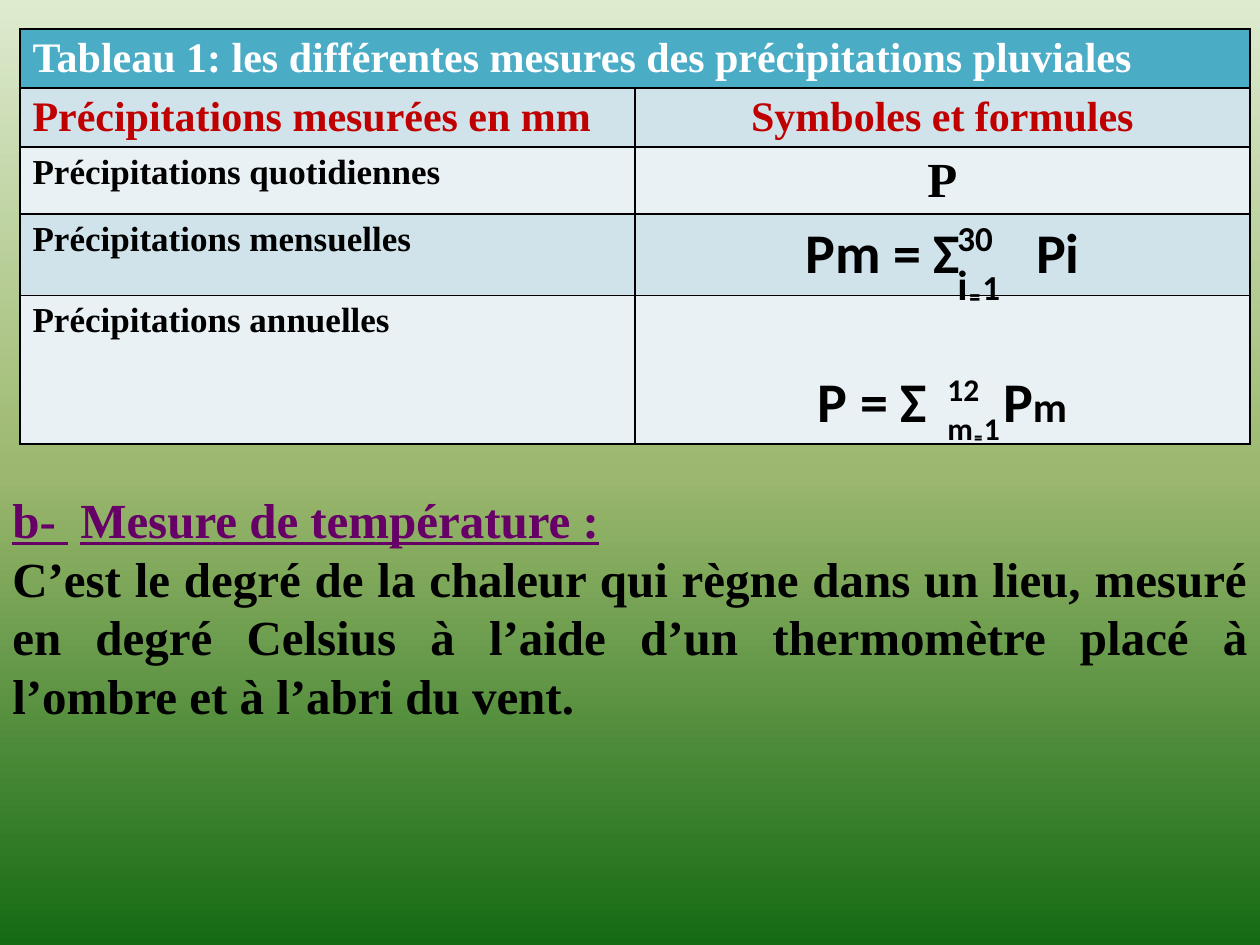
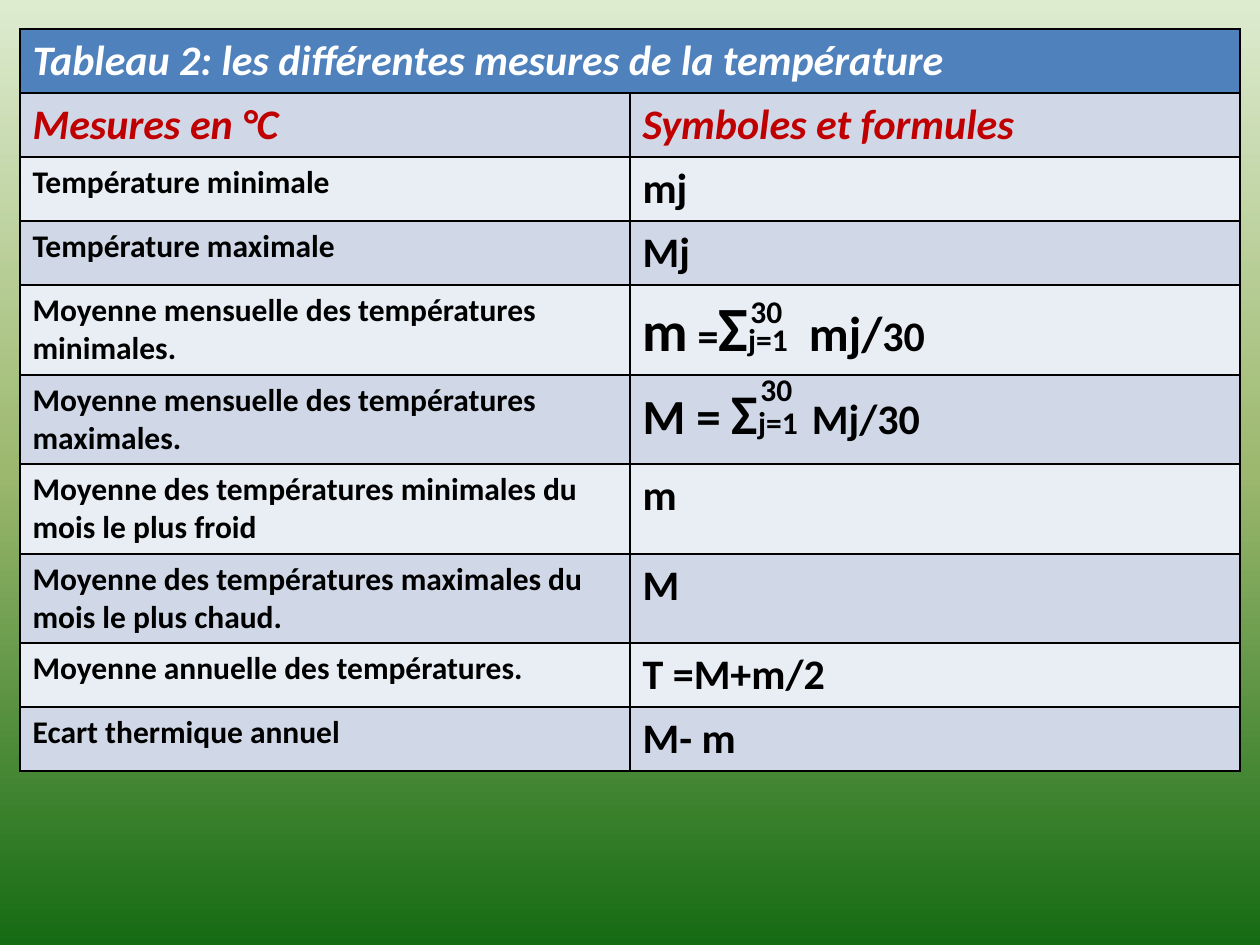
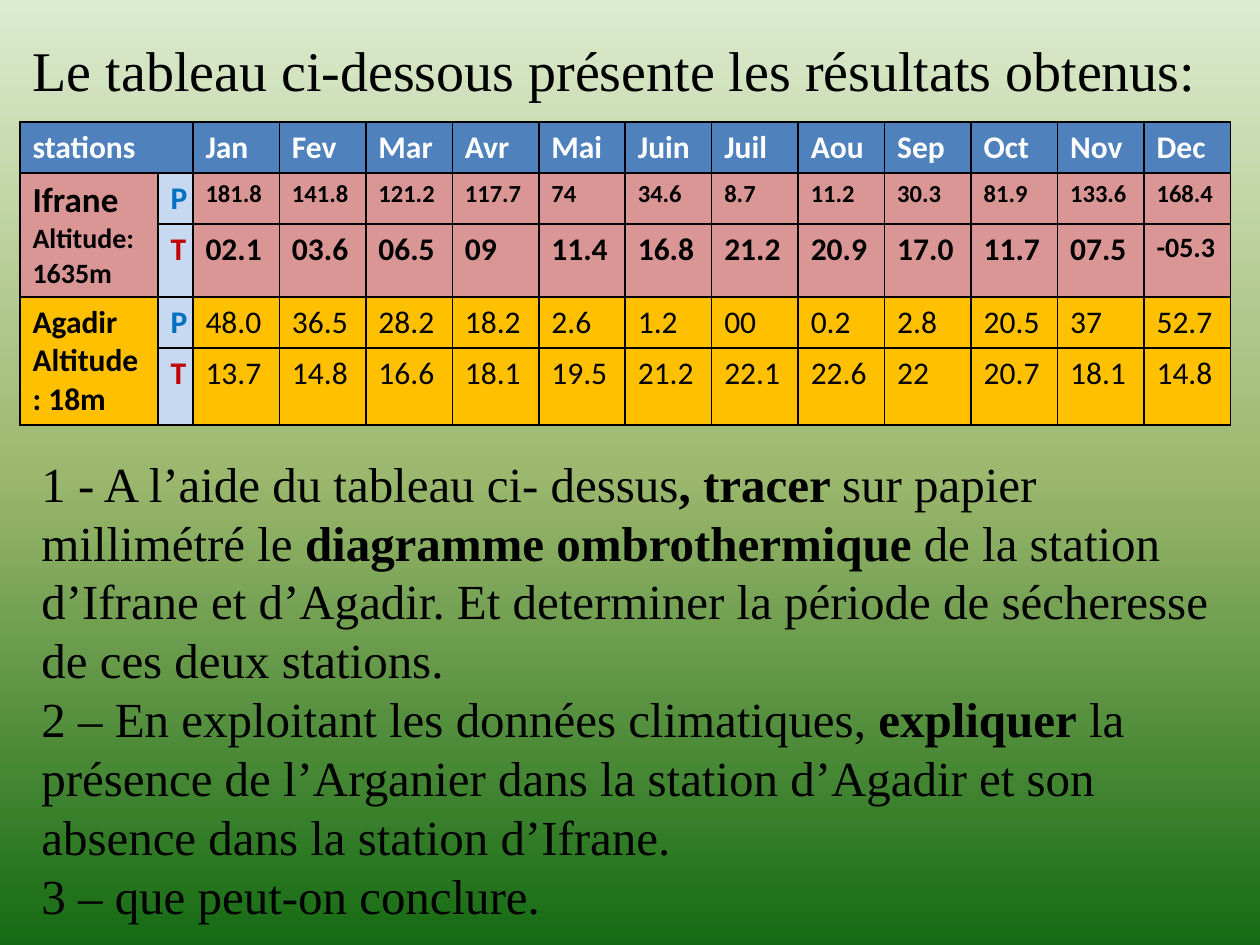
from copy import deepcopy

from lxml.etree import SubElement
from pptx import Presentation
from pptx.dml.color import RGBColor as RGB
from pptx.enum.text import MSO_ANCHOR as ANCHOR, MSO_AUTO_SIZE as FIT, PP_ALIGN as ALIGN
from pptx.oxml.ns import qn
from pptx.util import Pt

SCALE = 914400 / 126
COLORS = {
    "sky_top": "DDEBCF", "sky_mid": "9CB86E", "grass": "156B13",
    "black": "000000", "white": "FFFFFF", "red": "C00000",
    "blue": "0070C0", "purple": "660066",
    "teal": "4BACC6", "teal_band": "D0E3EA", "teal_light": "E9F1F5",
    "navy": "4F81BD", "navy_band": "D0D8E8", "navy_light": "E9EDF4",
    "rose": "D99694", "amber": "FFC000", "ice": "C6D9F1",
}
SERIF = {"name": "Times New Roman", "size": 28, "color": "black"}
SANS = {"name": "Calibri", "size": 18, "color": "black", "bold": True}
SERIF_BOLD = {**SERIF, "bold": True}
BOLD = {"bold": True}


def px(n):
    return round(n * SCALE)


def rgb(name):
    return RGB.from_string(COLORS[name])


def set_background(master):
    fill = master.background.fill
    fill.gradient()
    fill.gradient_angle = 270
    stops = master.element.find(".//" + qn("a:gsLst"))
    stops.append(deepcopy(stops[0]))
    for i, (stop, name) in enumerate(zip(fill.gradient_stops, ("sky_top", "sky_mid", "grass"))):
        stop.position = i / 2
        stop.color.rgb = rgb(name)


def format_run(r, fmt):
    for key, value in fmt.items():
        if key == "color":
            r.font.color.rgb = rgb(value)
        elif key == "gap":
            r._r.get_or_add_rPr().set("spc", str(value * 100))
        else:
            setattr(r.font, key, Pt(value) if key == "size" else value)


def write(tf, paras, base, aligns=(ALIGN.LEFT,)):
    for i, runs in enumerate(paras):
        p = tf.paragraphs[0] if i == 0 else tf.add_paragraph()
        p.alignment = aligns[min(i, len(aligns) - 1)]
        for text, fmt in runs:
            r = p.add_run()
            r.text = text
            format_run(r, {**base, **fmt})


def add_text(slide, box, paras, base, aligns=(ALIGN.LEFT,)):
    tf = slide.shapes.add_textbox(*map(px, box)).text_frame
    tf.word_wrap = True
    tf.auto_size = FIT.SHAPE_TO_FIT_TEXT
    write(tf, paras, base, aligns)


def add_limits(slide, limits):
    for box, runs in limits:
        add_text(slide, box, [runs], SANS)


def add_title(slide, box, text):
    sp = slide.shapes.title
    sp.left, sp.top, sp.width, sp.height = map(px, box)
    tf = sp.text_frame
    tf.word_wrap = True
    tf.auto_size = FIT.NONE
    tf.vertical_anchor = ANCHOR.TOP
    write(tf, [[(text, {})]], {**SERIF, "size": 32})


def add_grid(slide, left, top, cols, rows):
    table = slide.shapes.add_table(
        len(rows), len(cols), px(left), px(top), px(sum(cols)), px(sum(rows))).table
    for col, w in zip(table.columns, cols):
        col.width = px(w)
    for row, h in zip(table.rows, rows):
        row.height = px(h)
    for cell in table.iter_cells():
        tc_pr = cell._tc.get_or_add_tcPr()
        for side in ("a:lnL", "a:lnR", "a:lnT", "a:lnB"):
            ln = SubElement(tc_pr, qn(side), w=str(Pt(1)))
            color = SubElement(SubElement(ln, qn("a:solidFill")), qn("a:srgbClr"))
            color.set("val", COLORS["black"])
    return table


def fill_cell(cell, paras, base, fill, align=ALIGN.LEFT):
    cell.fill.solid()
    cell.fill.fore_color.rgb = rgb(fill)
    write(cell.text_frame, paras, base, (align,))


def add_measures(slide, left, top, width, heights, theme, heading, labels, entries, style):
    table = add_grid(slide, left, top, [width / 2] * 2, heights)
    table.cell(0, 0).merge(table.cell(0, 1))
    head = {**style["label"], **style["head"]}
    fill_cell(table.cell(0, 0), [[(heading, {"color": "white"})]], head, theme)
    bands = (theme + "_band", theme + "_light")
    aligns = (ALIGN.LEFT, style["align"])
    for c, label in enumerate(labels):
        fill_cell(table.cell(1, c), [[(label, {"color": "red"})]], head, bands[0], aligns[c])
    for i, (label, formula) in enumerate(entries, 2):
        band = bands[(i + 1) % 2]
        fill_cell(table.cell(i, 0), [[(label, {})]], style["label"], band)
        fill_cell(table.cell(i, 1), [formula], style["formula"], band, aligns[1])
    return table


def add_stations(slide, left, top, stations):
    months = "Jan Fev Mar Avr Mai Juin Juil Aou Sep Oct Nov Dec".split()
    table = add_grid(slide, left, top, [138, 35] + [1038 / 12] * 12, [51, 51, 73, 51, 77])
    table.cell(0, 0).merge(table.cell(0, 1))
    fill_cell(table.cell(0, 0), [[("stations", {"color": "white"})]], SANS, "navy")
    for c, month in enumerate(months, 2):
        fill_cell(table.cell(0, c), [[(month, {"color": "white"})]], SANS, "navy")
    for s, (name, fill, series) in enumerate(stations):
        first = 1 + 2 * s
        table.cell(first, 0).merge(table.cell(first + 1, 0))
        fill_cell(table.cell(first, 0), name, SANS, fill)
        for k, (values, fmt) in enumerate(series):
            symbol, color = (("P", "blue"), ("T", "red"))[k]
            fill_cell(table.cell(first + k, 1), [[(symbol, {"color": color})]], SANS, "ice")
            for c, value in enumerate(values.split(), 2):
                size = {"size": 16} if value.startswith("-") else {}
                fill_cell(table.cell(first + k, c), [[(value, size)]], {**SANS, **fmt}, fill)


def rain_slide(slide):
    big = {**SANS, "size": 32}
    entries = [
        ("Précipitations quotidiennes", [("P", {})]),
        ("Précipitations mensuelles",
         [("Pm = Σ", big), (" ", {**big, "gap": 36}), ("Pi", big)]),
        ("Précipitations annuelles",
         [("P = Σ", big), (" ", {**big, "gap": 36}), ("P", big), ("m", {**big, "size": 24})]),
    ]
    style = {"head": {"size": 24}, "label": {**SERIF_BOLD, "size": 20},
             "formula": SERIF_BOLD, "align": ALIGN.CENTER}
    table = add_measures(
        slide, 20, 29, 1230, [59, 59, 67, 81, 149], "teal",
        "Tableau 1: les différentes mesures des précipitations pluviales",
        ("Précipitations mesurées en mm", "Symboles et formules"), entries, style)
    table.cell(4, 1).vertical_anchor = ANCHOR.BOTTOM
    add_limits(slide, [
        ((945, 252, 88, 63), [("i₌", {"size": 24}), ("1", {"size": 20})]),
        ((945, 210, 69, 55), [("30", {"size": 20})]),
        ((935, 364, 59, 50), [("12", {})]),
        ((935, 403, 88, 50), [("m₌1", {})]),
    ])
    purple = {"color": "purple", "underline": True}
    add_text(slide, (0, 483, 1260, 251), [
        [("b-", purple), (" ", {**purple, "gap": 7}), ("Mesure de température :", purple)],
        [("C’est le degré de la chaleur qui règne dans un lieu, mesuré en degré Celsius "
          "à l’aide d’un thermomètre placé à l’ombre et à l’abri du vent.", {})],
    ], SERIF_BOLD, (ALIGN.LEFT, ALIGN.JUSTIFY))


def temperature_slide(slide):
    small = {"size": 18}
    entries = [
        ("Température minimale", [("mj", {})]),
        ("Température maximale", [("Mj", {})]),
        ("Moyenne mensuelle des températures minimales.",
         [("m", {"size": 32}), (" =", {}), ("Σ", {"size": 36}), ("j=1", small),
          (" ", {**small, "gap": 8}), ("mj/", {"size": 28}), ("30", {})]),
        ("Moyenne mensuelle des températures maximales.",
         [("M = ", {"size": 28}), ("Σ", {"size": 32}), ("j=1", small),
          (" ", {**small, "gap": 4}), ("Mj/30", {})]),
        ("Moyenne des températures minimales du mois le plus froid", [("m", {})]),
        ("Moyenne des températures maximales du mois le plus chaud.", [("M", {})]),
        ("Moyenne annuelle des températures.", [("T =M+m/2", {})]),
        ("Ecart thermique annuel", [("M- m", {})]),
    ]
    style = {"head": {"size": 24, "italic": True}, "label": SANS,
             "formula": {**SANS, "size": 24}, "align": ALIGN.LEFT}
    add_measures(
        slide, 20, 29, 1220, [64] * 4 + [90, 89] * 2 + [64] * 2, "navy",
        "Tableau 2: les différentes mesures de la température",
        ("Mesures en °C", "Symboles et formules"), entries, style)
    add_limits(slide, [((738, 286, 59, 50), [("30", {})]),
                       ((748, 364, 59, 50), [("30", {})])])


def results_slide(slide):
    add_title(slide, (20, 29, 1240, 81), "Le tableau ci-dessous présente les résultats obtenus:")
    plain = {"bold": False}
    add_stations(slide, 20, 122, [
        ([[("Ifrane", {"size": 20})], [("Altitude: 1635m", {"size": 16})]], "rose", [
            ("181.8 141.8 121.2 117.7 74 34.6 8.7 11.2 30.3 81.9 133.6 168.4", {"size": 14}),
            ("02.1 03.6 06.5 09 11.4 16.8 21.2 20.9 17.0 11.7 07.5 -05.3", {}),
        ]),
        ([[("Agadir", {})], [("Altitude: 18m", {})]], "amber", [
            ("48.0 36.5 28.2 18.2 2.6 1.2 00 0.2 2.8 20.5 37 52.7", plain),
            ("13.7 14.8 16.6 18.1 19.5 21.2 22.1 22.6 22 20.7 18.1 14.8", plain),
        ]),
    ])
    add_text(slide, (29, 447, 1201, 488), [
        [("1 - A l’aide du tableau ci- dessus", {}), (", tracer ", BOLD),
         ("sur papier millimétré le ", {}), ("diagramme ombrothermique", BOLD),
         (" de la station d’Ifrane et d’Agadir. Et determiner la période de sécheresse "
          "de ces deux stations.", {})],
        [("2 – En exploitant les données climatiques, ", {}), ("expliquer", BOLD),
         (" la présence de l’Arganier dans la station d’Agadir et son absence "
          "dans la station d’Ifrane.", {})],
        [("3 – que peut-on conclure.", {})],
    ], SERIF)


def main():
    prs = Presentation()
    prs.slide_width, prs.slide_height = px(1260), px(945)
    set_background(prs.slide_master)
    title_only, blank = prs.slide_layouts[5], prs.slide_layouts[6]
    for build, layout in ((rain_slide, blank), (temperature_slide, blank),
                          (results_slide, title_only)):
        build(prs.slides.add_slide(layout))
    prs.save("out.pptx")


if __name__ == "__main__":
    main()
